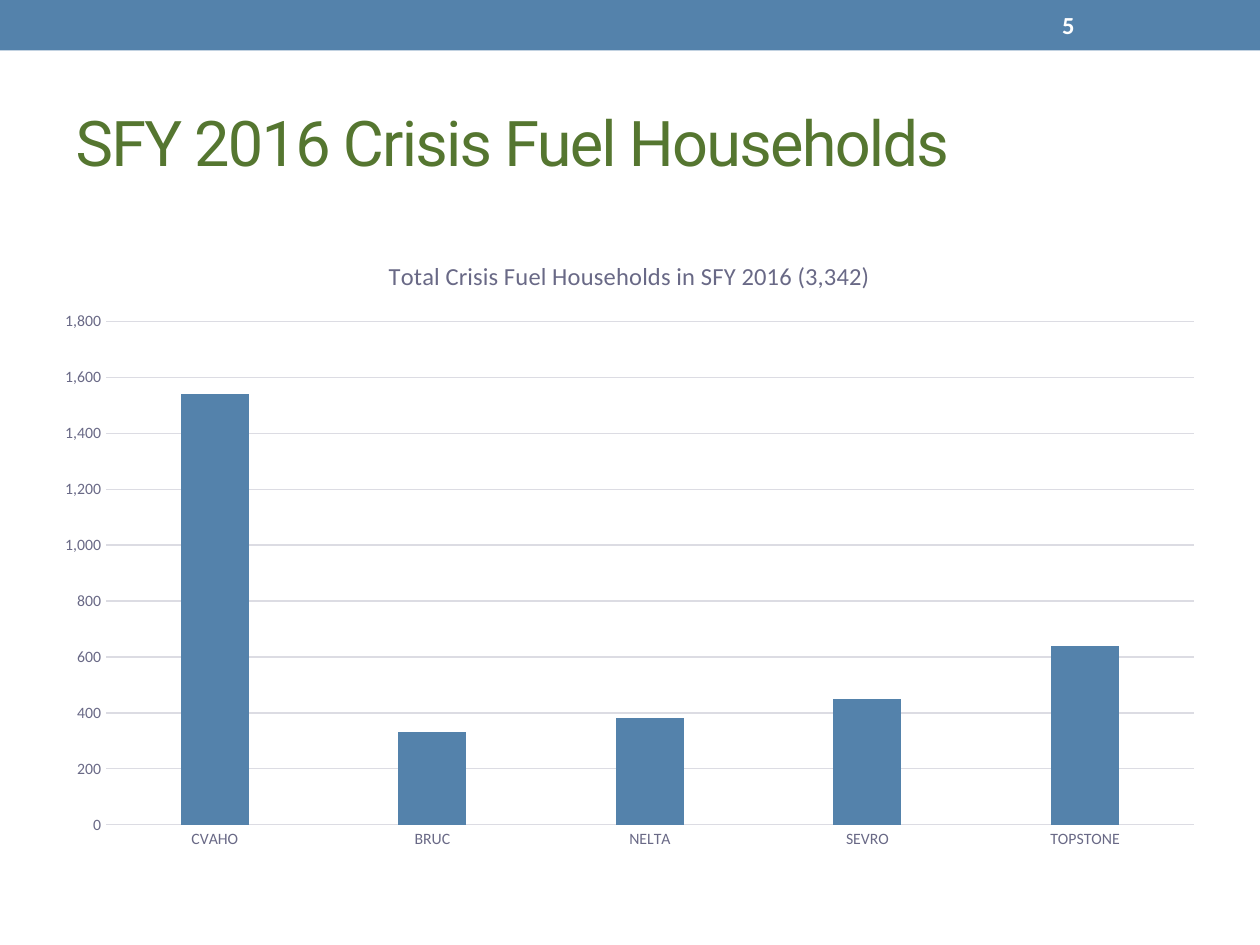
from pptx import Presentation
from pptx.chart.data import CategoryChartData
from pptx.dml.color import RGBColor
from pptx.enum.chart import XL_CHART_TYPE, XL_TICK_MARK
from pptx.enum.shapes import MSO_SHAPE
from pptx.enum.text import MSO_ANCHOR, PP_ALIGN
from pptx.util import Cm, Pt

COLORS = {
    "blue": "5482AB",
    "green": "557630",
    "white": "FFFFFF",
    "label": "696986",
    "grid": "DCDCE3",
}


def set_font(font, name, size, color, bold=False):
    font.name = name
    font.size = Pt(size)
    font.bold = bold
    font.color.rgb = RGBColor.from_string(COLORS[color])


def set_line(line, color):
    line.color.rgb = RGBColor.from_string(COLORS[color])
    line.width = Pt(0.75)


prs = Presentation()
prs.slide_width, prs.slide_height = Cm(25.4), Cm(19.05)
s = prs.slides.add_slide(prs.slide_layouts[5])

# Top band
band = s.shapes.add_shape(MSO_SHAPE.RECTANGLE, 0, 0, prs.slide_width, Cm(1.02))
band.shadow.inherit = False
band.fill.solid()
band.fill.fore_color.rgb = RGBColor.from_string(COLORS["blue"])
band.line.fill.background()

# Title
title = s.shapes.title
title.left, title.top, title.width, title.height = Cm(1.27), Cm(1.47), Cm(22.86), Cm(2.74)
tf = title.text_frame
tf.vertical_anchor = MSO_ANCHOR.MIDDLE
p = tf.paragraphs[0]
p.alignment = PP_ALIGN.LEFT
r = p.add_run()
r.text = "SFY 2016 Crisis Fuel Households"
set_font(r.font, "Roboto", 36, "green")
r.font._element.set("spc", "-100")

# Page number
number = s.shapes.add_textbox(Cm(21.16), Cm(0.05), Cm(2.97), Cm(0.91))
tf = number.text_frame
tf.word_wrap = True
tf.vertical_anchor = MSO_ANCHOR.MIDDLE
p = tf.paragraphs[0]
p.text = "5"
set_font(p.font, "Calibri", 14, "white", bold=True)

# Households by agency
data = CategoryChartData(number_format="#,##0")
data.categories = ["CVAHO", "BRUC", "NELTA", "SEVRO", "TOPSTONE"]
data.add_series("Series 1", [1540, 330, 380, 450, 640])
chart = s.shapes.add_chart(
    XL_CHART_TYPE.COLUMN_CLUSTERED, Cm(0.84), Cm(4.75), Cm(23.7), Cm(12.6), data
).chart
set_font(chart.font, "Calibri", 10, "label")
chart.has_legend = False
chart.has_title = True
p = chart.chart_title.text_frame.paragraphs[0]
p.text = "Total Crisis Fuel Households in SFY 2016 (3,342)"
set_font(p.font, "Calibri", 14, "label")

plot = chart.plots[0]
plot.gap_width = 219
plot.overlap = -27
plot.vary_by_categories = False
fill = plot.series[0].format.fill
fill.solid()
fill.fore_color.rgb = RGBColor.from_string(COLORS["blue"])

for axis in (chart.category_axis, chart.value_axis):
    axis.major_tick_mark = axis.minor_tick_mark = XL_TICK_MARK.NONE
    set_font(axis.tick_labels.font, "Calibri", 9, "label")
set_line(chart.category_axis.format.line, "grid")

values = chart.value_axis
values.minimum_scale, values.maximum_scale, values.major_unit = 0, 1800, 200
values.format.line.fill.background()
values.has_major_gridlines = True
set_line(values.major_gridlines.format.line, "grid")

prs.save("out.pptx")
